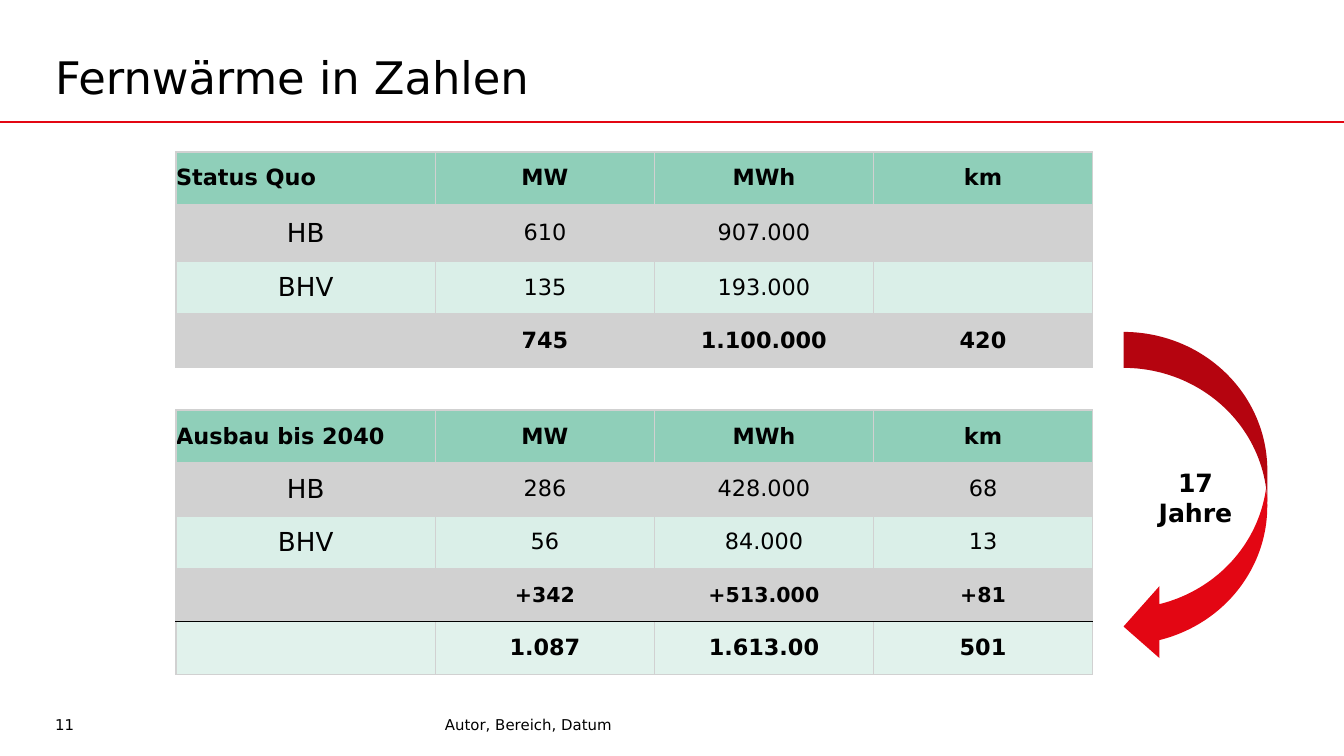
from lxml.etree import SubElement
from pptx import Presentation
from pptx.dml.color import RGBColor
from pptx.enum.shapes import MSO_CONNECTOR, MSO_SHAPE
from pptx.enum.text import MSO_ANCHOR, PP_ALIGN
from pptx.oxml.ns import qn
from pptx.util import Inches, Pt

FONT = "DejaVu Sans"
BLACK, RED, GRAY = "000000", "E30613", "D1D1D1"
GREEN, LIGHT_GREEN, PALE_GREEN = "8FCFB9", "DAEFE8", "E1F2EC"
SLIDE_WIDTH = 10
TABLE_LEFT = 1.31
COLUMN_WIDTHS = (1.93, 1.63, 1.63, 1.63)

STATUS_ROWS = [
    (0.39, GREEN, 12, True, ("Status Quo", "MW", "MWh", " km ")),
    (0.42, GRAY, 12, False, ("HB", "610", "907.000", "")),
    (0.39, LIGHT_GREEN, 12, False, ("BHV", "135", "193.000", "")),
    (0.39, GRAY, 12, True, ("", "745", "1.100.000", "420")),
]
EXPANSION_ROWS = [
    (0.39, GREEN, 12, True, ("Ausbau bis 2040", "MW", "MWh", " km ")),
    (0.39, GRAY, 12, False, ("HB", "286", "428.000", "68")),
    (0.39, LIGHT_GREEN, 12, False, ("BHV", "56", "84.000", "13")),
    (0.39, GRAY, 11, True, ("", "+342", "+513.000", "+81")),
    (0.39, PALE_GREEN, 12, True, ("", "1.087", "1.613.00", "501")),
]


def color(value):
    """Turn a hex string into a colour."""
    return RGBColor.from_string(value)


def write(frame, text, size=12, bold=False, align=PP_ALIGN.LEFT):
    """Put one formatted paragraph into a text frame."""
    frame.text = text
    paragraph = frame.paragraphs[0]
    paragraph.alignment = align
    font = paragraph.font
    font.name, font.size, font.bold = FONT, Pt(size), bold
    font.color.rgb = color(BLACK)


def set_frame(frame, side_inset=0, end_inset=0, anchor=MSO_ANCHOR.MIDDLE):
    """Set the insets, anchor and wrapping of a text frame."""
    frame.margin_left = frame.margin_right = Inches(side_inset)
    frame.margin_top = frame.margin_bottom = Inches(end_inset)
    frame.vertical_anchor = anchor
    frame.word_wrap = True


def add_header(slide, left, top, width, height):
    """Place the title and the red rule below it."""
    title = slide.shapes.title
    title.left, title.top = Inches(left), Inches(top)
    title.width, title.height = Inches(width), Inches(height)
    set_frame(title.text_frame, anchor=MSO_ANCHOR.TOP)
    write(title.text_frame, "Fernwärme in Zahlen", size=24)
    rule_top = Inches(top + height + 0.07)
    rule = slide.shapes.add_connector(
        MSO_CONNECTOR.STRAIGHT, 0, rule_top, Inches(SLIDE_WIDTH), rule_top)
    rule.line.color.rgb = color(RED)
    rule.line.width = Pt(1)
    SubElement(rule._element.spPr, qn("a:effectLst"))


def add_footer(slide, left, top, height):
    """Place the page number and the author line."""
    for offset, width, text in ((0, 0.79, "11"), (2.9, 3.38, "Autor, Bereich, Datum")):
        box = slide.shapes.add_textbox(
            Inches(left + offset), Inches(top), Inches(width), Inches(height))
        set_frame(box.text_frame)
        write(box.text_frame, text, size=8)


def set_borders(cell, top=GRAY, bottom=GRAY):
    """Draw the four borders of a cell."""
    properties = cell._tc.get_or_add_tcPr()
    for side, value in (("L", GRAY), ("R", GRAY), ("T", top), ("B", bottom)):
        line = SubElement(properties, qn(f"a:ln{side}"), w=str(Pt(1)), cmpd="sng")
        SubElement(SubElement(line, qn("a:solidFill")), qn("a:srgbClr"), val=value)
        SubElement(line, qn("a:prstDash"), val="solid")


def add_figures(slide, left, top, height, rows, total_row=None):
    """Place a table of figures, with a black line above the total row."""
    frame = slide.shapes.add_table(
        len(rows), len(COLUMN_WIDTHS), Inches(left), Inches(top),
        Inches(sum(COLUMN_WIDTHS)), Inches(height))
    table = frame.table
    table.first_row = table.horz_banding = False
    for column, width in zip(table.columns, COLUMN_WIDTHS):
        column.width = Inches(width)
    stretch = height / sum(row[0] for row in rows)
    for row_index, (row_height, fill, size, bold, texts) in enumerate(rows):
        table.rows[row_index].height = Inches(row_height * stretch)
        for column_index, text in enumerate(texts):
            cell = table.cell(row_index, column_index)
            cell.margin_left = cell.margin_right = 0
            cell.margin_top = cell.margin_bottom = 0
            cell.vertical_anchor = MSO_ANCHOR.MIDDLE
            set_borders(
                cell,
                top=BLACK if row_index == total_row else GRAY,
                bottom=BLACK if row_index + 1 == total_row else GRAY)
            cell.fill.solid()
            cell.fill.fore_color.rgb = color(fill)
            is_heading = row_index == 0 and column_index == 0
            is_city = column_index == 0 and not bold
            write(cell.text_frame, text, size=14 if is_city else size, bold=bold,
                  align=PP_ALIGN.LEFT if is_heading else PP_ALIGN.CENTER)


def add_period_arrow(slide, left, top, width, height):
    """Place the curved arrow that names the time span."""
    arrow = slide.shapes.add_shape(
        MSO_SHAPE.CURVED_LEFT_ARROW,
        Inches(left), Inches(top), Inches(width), Inches(height))
    arrow.shadow.inherit = False
    arrow.fill.solid()
    arrow.fill.fore_color.rgb = color(RED)
    arrow.line.fill.background()
    set_frame(arrow.text_frame, side_inset=0.15, end_inset=0.05)
    write(arrow.text_frame, "17 Jahre", size=13.5, bold=True, align=PP_ALIGN.CENTER)


def main():
    """Build and save the slide."""
    presentation = Presentation()
    presentation.slide_width = Inches(SLIDE_WIDTH)
    presentation.slide_height = Inches(SLIDE_WIDTH * 9 / 16)
    slide = presentation.slides.add_slide(presentation.slide_layouts[5])
    add_header(slide, 0.41, 0.37, 7.87, 0.47)
    add_footer(slide, 0.41, 5.31, 0.16)
    add_figures(slide, TABLE_LEFT, 3.05, 1.97, EXPANSION_ROWS, total_row=4)
    add_figures(slide, TABLE_LEFT, 1.13, 1.6, STATUS_ROWS)
    add_period_arrow(slide, 8.36, 2.47, 1.07, 2.46)
    presentation.save("out.pptx")


if __name__ == "__main__":
    main()
